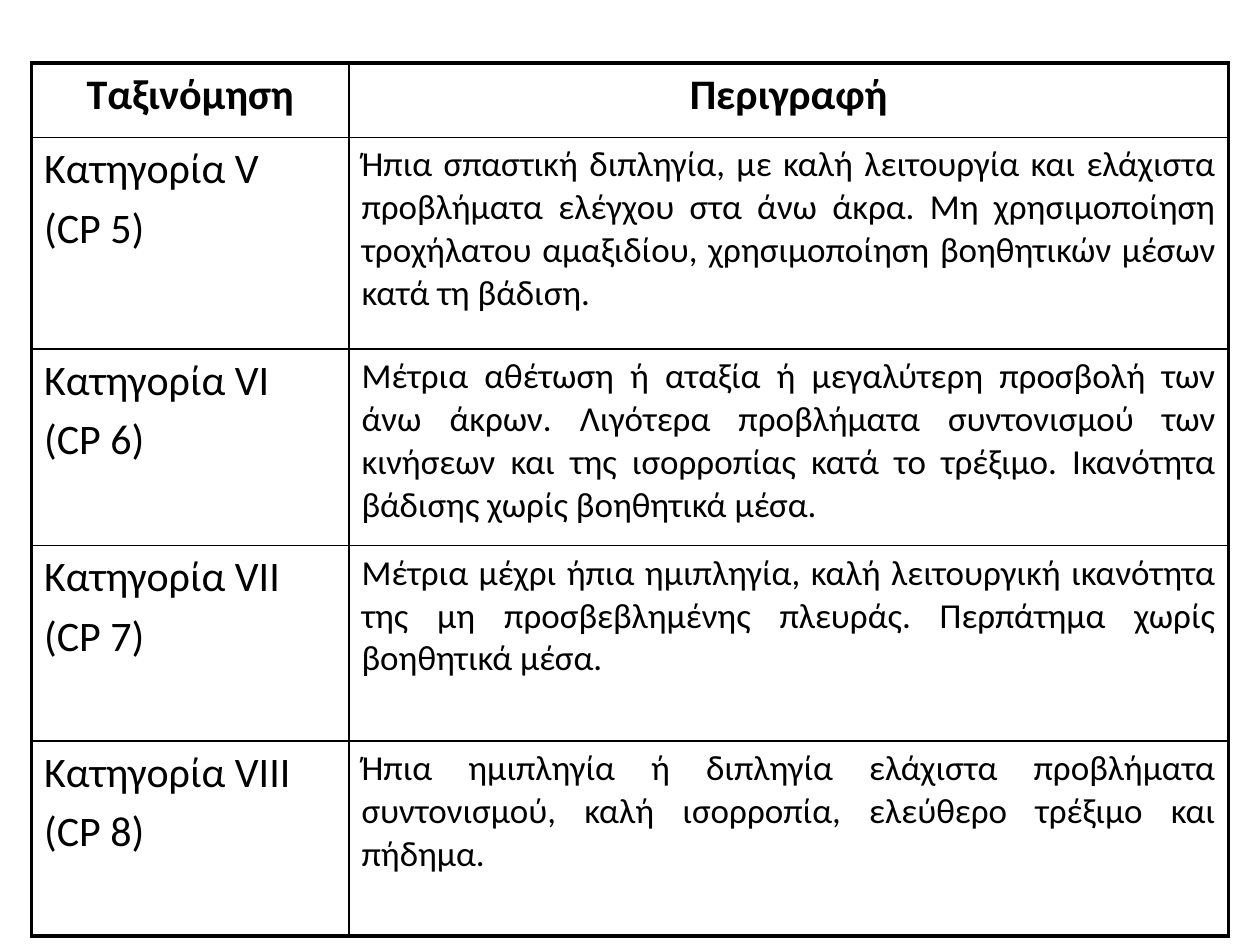
from pptx import Presentation
from pptx.dml.color import RGBColor
from pptx.enum.text import PP_ALIGN as Align
from pptx.oxml.ns import qn
from pptx.util import Inches, Pt
from lxml import etree

COLORS = {"ink": "000000"}
FONT = "Calibri"
THIN, THICK = 1, 2.25
COLUMN_WIDTHS = [2.52, 6.98]
ROW_HEIGHTS = [0.59, 1.68, 1.56, 1.55, 1.55]

HEADERS = ["Ταξινόμηση", "Περιγραφή"]
CATEGORIES = [
    ("Κατηγορία V\n(CP 5)",
     "Ήπια σπαστική διπληγία, με καλή λειτουργία και ελάχιστα προβλήματα "
     "ελέγχου στα άνω άκρα. Μη χρησιμοποίηση τροχήλατου αμαξιδίου, "
     "χρησιμοποίηση βοηθητικών μέσων κατά τη βάδιση."),
    ("Κατηγορία VI\n(CP 6)",
     "Μέτρια αθέτωση ή αταξία ή μεγαλύτερη προσβολή των άνω άκρων. "
     "Λιγότερα προβλήματα συντονισμού των κινήσεων και της ισορροπίας "
     "κατά το τρέξιμο. Ικανότητα βάδισης χωρίς βοηθητικά μέσα."),
    ("Κατηγορία VII\n(CP 7)",
     "Μέτρια μέχρι ήπια ημιπληγία, καλή λειτουργική ικανότητα της μη "
     "προσβεβλημένης πλευράς. Περπάτημα χωρίς βοηθητικά μέσα."),
    ("Κατηγορία VIII\n(CP 8)",
     "Ήπια ημιπληγία ή διπληγία ελάχιστα προβλήματα συντονισμού, καλή "
     "ισορροπία, ελεύθερο τρέξιμο και πήδημα."),
]


def fill_cell(cell, text, size, align, bold):
    cell.fill.background()
    cell.text_frame.text = text
    for paragraph in cell.text_frame.paragraphs:
        paragraph.alignment = align
        paragraph.space_before = Pt(size * 0.2)
        for run in paragraph.runs:
            run.font.name = FONT
            run.font.size = Pt(size)
            run.font.bold = bold
            run.font.color.rgb = RGBColor.from_string(COLORS["ink"])


def set_borders(cell, widths):
    # Border lines come before the fill, in the order left, right, top, bottom
    properties = cell._tc.get_or_add_tcPr()
    for position, (side, width) in enumerate(widths.items()):
        line = etree.Element(qn(f"a:ln{side}"), w=str(Pt(width)))
        solid = etree.SubElement(line, qn("a:solidFill"))
        etree.SubElement(solid, qn("a:srgbClr"), val=COLORS["ink"])
        properties.insert(position, line)


prs = Presentation()
prs.slide_width, prs.slide_height = Inches(10), Inches(7.5)
slide = prs.slides.add_slide(prs.slide_layouts[6])

# Table grid
rows = [HEADERS, *CATEGORIES]
classification = slide.shapes.add_table(
    len(rows), len(HEADERS), Inches(0.25), Inches(0.5),
    Inches(sum(COLUMN_WIDTHS)), Inches(sum(ROW_HEIGHTS))).table
for column, width in zip(classification.columns, COLUMN_WIDTHS):
    column.width = Inches(width)
for row, height in zip(classification.rows, ROW_HEIGHTS):
    row.height = Inches(height)

# Cell text, with a thick outer frame and thin inner lines
last_row, last_column = len(rows) - 1, len(HEADERS) - 1
for r, texts in enumerate(rows):
    for c, text in enumerate(texts):
        cell = classification.cell(r, c)
        if r == 0:
            fill_cell(cell, text, 24, Align.CENTER, True)
        elif c == 0:
            fill_cell(cell, text, 24, Align.LEFT, False)
        else:
            fill_cell(cell, text, 20, Align.JUSTIFY, False)
        set_borders(cell, {
            "L": THICK if c == 0 else THIN,
            "R": THICK if c == last_column else THIN,
            "T": THICK if r == 0 else THIN,
            "B": THICK if r == last_row else THIN,
        })

prs.save("out.pptx")
